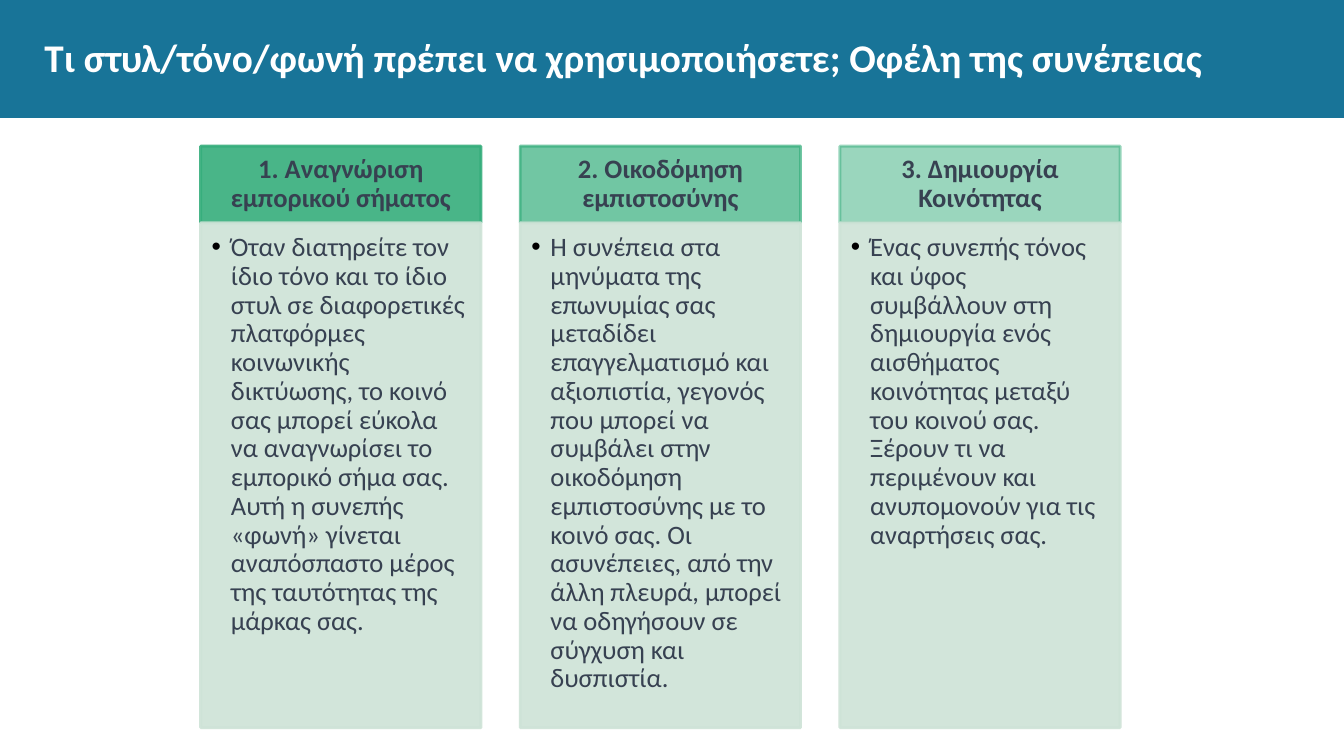
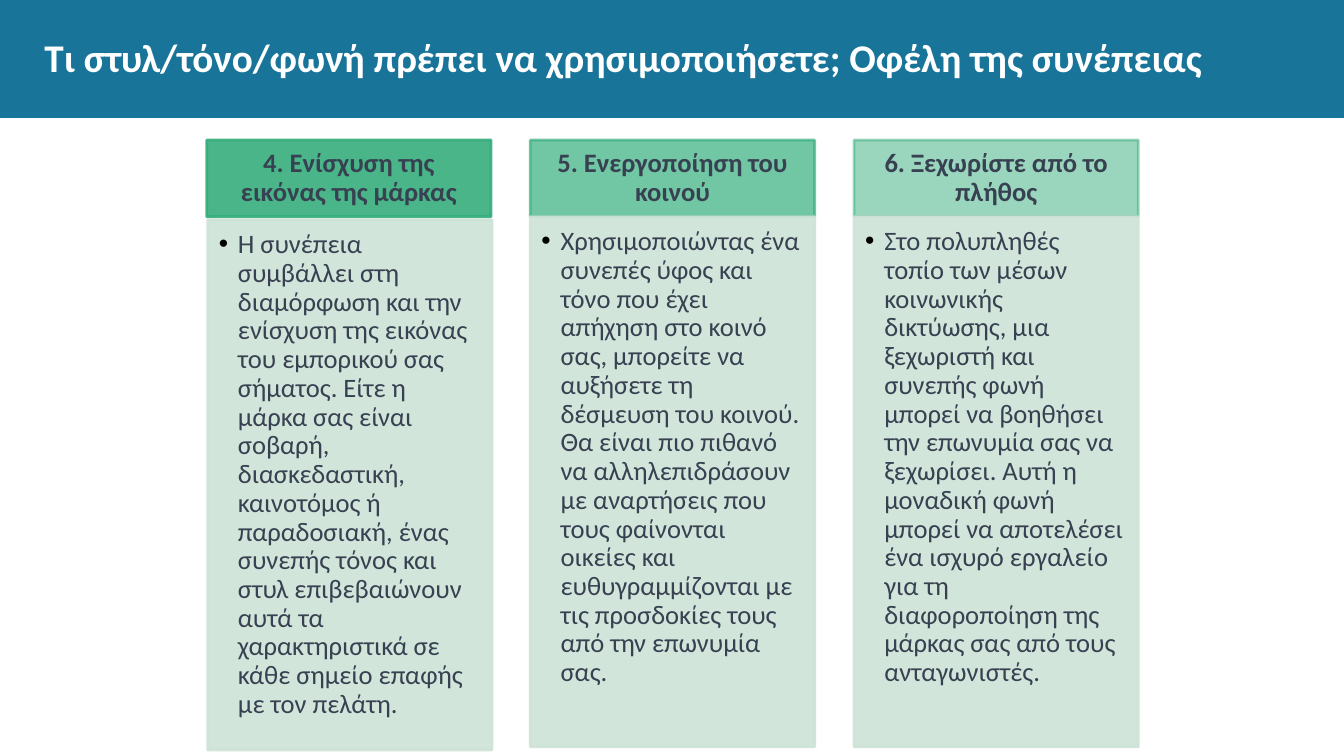
from dataclasses import dataclass

from lxml import etree
from pptx import Presentation
from pptx.dml.color import RGBColor
from pptx.enum.shapes import MSO_SHAPE
from pptx.enum.text import MSO_ANCHOR, MSO_AUTO_SIZE, PP_ALIGN
from pptx.oxml.ns import qn
from pptx.util import Inches, Pt

RECT = MSO_SHAPE.RECTANGLE
TOP, MIDDLE = MSO_ANCHOR.TOP, MSO_ANCHOR.MIDDLE
FIXED = MSO_AUTO_SIZE.NONE
LEFT, CENTER = PP_ALIGN.LEFT, PP_ALIGN.CENTER


@dataclass(frozen=True)
class Theme:
    font: str = "Calibri"
    band: str = "187498"
    head: str = "36AE7C"
    body: str = "CEE3D7"
    ink: str = "374151"
    white: str = "FFFFFF"
    bullet: str = "000000"
    title_size: int = 28
    text_size: int = 19
    line: int = 2
    head_tints: tuple = (90, 70, 50)
    body_tint: int = 90


THEME = Theme()
WIDTH, HEIGHT = 13.33, 7.5
BAND = (0, 0, WIDTH, 1.17)
TITLE_BOX = (0.44, 0.19, 12.46, 0.74)
GAP = 0.39
HEAD_HIGH = 0.76
INDENT = 0.19
TITLE = "Τι στυλ/τόνο/φωνή πρέπει να χρησιμοποιήσετε; Οφέλη της συνέπειας"

TITLE_FRAME = {"anchor": MIDDLE, "margins": (0, 0, 0, 0)}
HEAD_FRAME = {"anchor": MIDDLE, "margins": (0.15, 0.08, 0.15, 0.08)}
BODY_FRAME = {"anchor": TOP, "margins": (0.11, 0.11, 0.15, 0.17)}
TITLE_PARA = {"alignment": LEFT}
HEAD_PARA = {"alignment": CENTER, "line_spacing": 0.9}
BODY_PARA = {"alignment": LEFT, "line_spacing": 0.9}
TITLE_FONT = {"size": Pt(THEME.title_size), "bold": True}
HEAD_FONT = {"size": Pt(THEME.text_size), "bold": True}
BODY_FONT = {"size": Pt(THEME.text_size), "bold": False}

SLIDES = [
    {
        "box": (1.99, 1.45, 9.12, 5.77),
        "shifts": [(0, 0), (0, 0), (0, 0)],
        "cards": [
            (
                "1. Αναγνώριση εμπορικού σήματος",
                "Όταν διατηρείτε τον ίδιο τόνο και το ίδιο στυλ σε διαφορετικές "
                "πλατφόρμες κοινωνικής δικτύωσης, το κοινό σας μπορεί εύκολα να "
                "αναγνωρίσει το εμπορικό σήμα σας. Αυτή η συνεπής «φωνή» γίνεται "
                "αναπόσπαστο μέρος της ταυτότητας της μάρκας σας.",
            ),
            (
                "2. Οικοδόμηση εμπιστοσύνης",
                "Η συνέπεια στα μηνύματα της επωνυμίας σας μεταδίδει "
                "επαγγελματισμό και αξιοπιστία, γεγονός που μπορεί να συμβάλει "
                "στην οικοδόμηση εμπιστοσύνης με το κοινό σας. Οι ασυνέπειες, "
                "από την άλλη πλευρά, μπορεί να οδηγήσουν σε σύγχυση και "
                "δυσπιστία.",
            ),
            (
                "3. Δημιουργία Κοινότητας",
                "Ένας συνεπής τόνος και ύφος συμβάλλουν στη δημιουργία ενός "
                "αισθήματος κοινότητας μεταξύ του κοινού σας. Ξέρουν τι να "
                "περιμένουν και ανυπομονούν για τις αναρτήσεις σας.",
            ),
        ],
    },
    {
        "box": (2.05, 1.39, 9.24, 6.02),
        "shifts": [(0.01, 0.03), (0, 0), (0, 0)],
        "cards": [
            (
                "4. Ενίσχυση της εικόνας της μάρκας",
                "Η συνέπεια συμβάλλει στη διαμόρφωση και την ενίσχυση της "
                "εικόνας του εμπορικού σας σήματος. Είτε η μάρκα σας είναι "
                "σοβαρή, διασκεδαστική, καινοτόμος ή παραδοσιακή, ένας συνεπής "
                "τόνος και στυλ επιβεβαιώνουν αυτά τα χαρακτηριστικά σε κάθε "
                "σημείο επαφής με τον πελάτη.",
            ),
            (
                "5. Ενεργοποίηση του κοινού",
                "Χρησιμοποιώντας ένα συνεπές ύφος και τόνο που έχει απήχηση στο "
                "κοινό σας, μπορείτε να αυξήσετε τη δέσμευση του κοινού. Θα "
                "είναι πιο πιθανό να αλληλεπιδράσουν με αναρτήσεις που τους "
                "φαίνονται οικείες και ευθυγραμμίζονται με τις προσδοκίες τους "
                "από την επωνυμία σας.",
            ),
            (
                "6. Ξεχωρίστε από το πλήθος",
                "Στο πολυπληθές τοπίο των μέσων κοινωνικής δικτύωσης, μια "
                "ξεχωριστή και συνεπής φωνή μπορεί να βοηθήσει την επωνυμία σας "
                "να ξεχωρίσει. Αυτή η μοναδική φωνή μπορεί να αποτελέσει ένα "
                "ισχυρό εργαλείο για τη διαφοροποίηση της μάρκας σας από τους "
                "ανταγωνιστές.",
            ),
        ],
    },
]


def apply(target, values):
    for name, value in values.items():
        setattr(target, name, value)


def write(shape, text, look, para, font, color):
    frame = shape.text_frame
    sides = ("margin_left", "margin_top", "margin_right", "margin_bottom")
    apply(frame, dict(zip(sides, map(Inches, look["margins"]))))
    apply(frame, {
        "word_wrap": True,
        "auto_size": FIXED,
        "vertical_anchor": look["anchor"],
    })
    line = frame.paragraphs[0]
    apply(line, para)
    run = line.add_run()
    run.text = text
    apply(run.font, {"name": THEME.font, **font})
    run.font.color.rgb = RGBColor.from_string(color)
    return line


def add_bullet(line):
    props = line._p.get_or_add_pPr()
    props.set("marL", str(Inches(INDENT)))
    props.set("indent", str(-Inches(INDENT)))
    tint = etree.SubElement(props, qn("a:buClr"))
    etree.SubElement(tint, qn("a:srgbClr"), val=THEME.bullet)
    etree.SubElement(props, qn("a:buFont"), typeface="Arial")
    etree.SubElement(props, qn("a:buChar"), char="•")


def add_rect(shapes, box, color, tint=100):
    rect = shapes.add_shape(RECT, *map(Inches, box))
    rect.shadow.inherit = False
    for fill in (rect.fill, rect.line.fill):
        fill.solid()
        fill.fore_color.rgb = RGBColor.from_string(color)
    rect.line.width = Pt(THEME.line)
    if tint < 100:
        for node in rect.element.iter(qn("a:srgbClr")):
            etree.SubElement(node, qn("a:alpha"), val=str(tint * 1000))
    return rect


def add_band(slide):
    band = add_rect(slide.shapes, BAND, THEME.band)
    band.line.fill.background()
    slide.slide_layout.shapes.element.insert(2, band.element)


def add_title(slide):
    title = slide.shapes.title
    sides = ("left", "top", "width", "height")
    apply(title, dict(zip(sides, map(Inches, TITLE_BOX))))
    write(title, TITLE, TITLE_FRAME, TITLE_PARA, TITLE_FONT, THEME.white)


def add_card(shapes, box, card, tint, shift):
    left, top, width, height = box
    label, text = card
    head = add_rect(shapes, (left, top, width, HEAD_HIGH), THEME.head, tint)
    write(head, label, HEAD_FRAME, HEAD_PARA, HEAD_FONT, THEME.ink)
    place = (left + shift[0], top + HEAD_HIGH + shift[1],
             width, height - HEAD_HIGH)
    body = add_rect(shapes, place, THEME.body, THEME.body_tint)
    line = write(body, text, BODY_FRAME, BODY_PARA, BODY_FONT, THEME.ink)
    add_bullet(line)


def add_cards(slide, box, cards, shifts):
    left, top, width, height = box
    wide = (width - GAP * (len(cards) - 1)) / len(cards)
    group = slide.shapes.add_group_shape()
    rows = zip(cards, THEME.head_tints, shifts)
    for index, (card, tint, shift) in enumerate(rows):
        place = (left + index * (wide + GAP), top, wide, height)
        add_card(group.shapes, place, card, tint, shift)


def main():
    deck = Presentation()
    apply(deck, {"slide_width": Inches(WIDTH), "slide_height": Inches(HEIGHT)})
    layout = deck.slide_layouts[5]
    for index, data in enumerate(SLIDES):
        slide = deck.slides.add_slide(layout)
        if index == 0:
            add_band(slide)
        add_title(slide)
        add_cards(slide, **data)
    deck.save("out.pptx")


if __name__ == "__main__":
    main()
